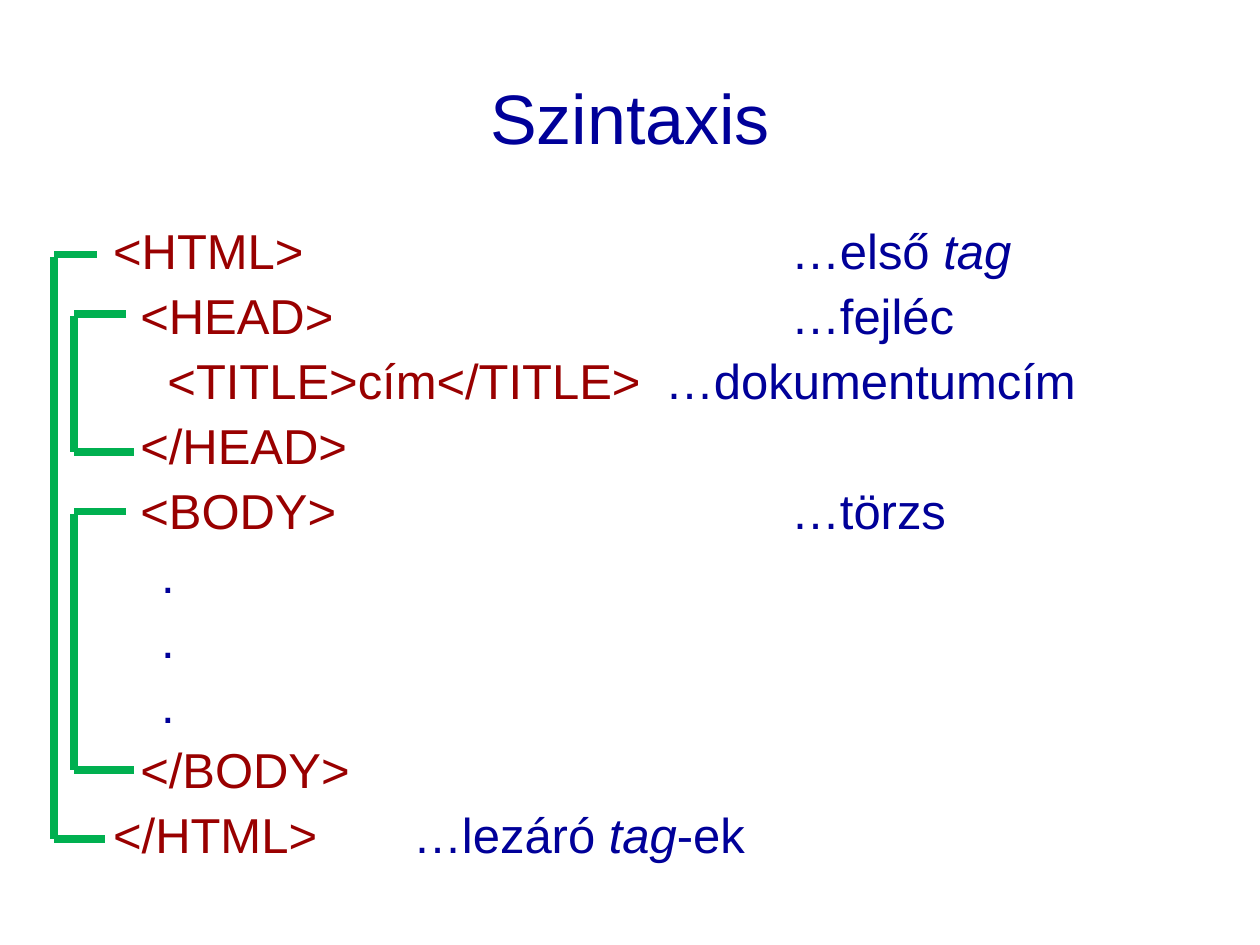
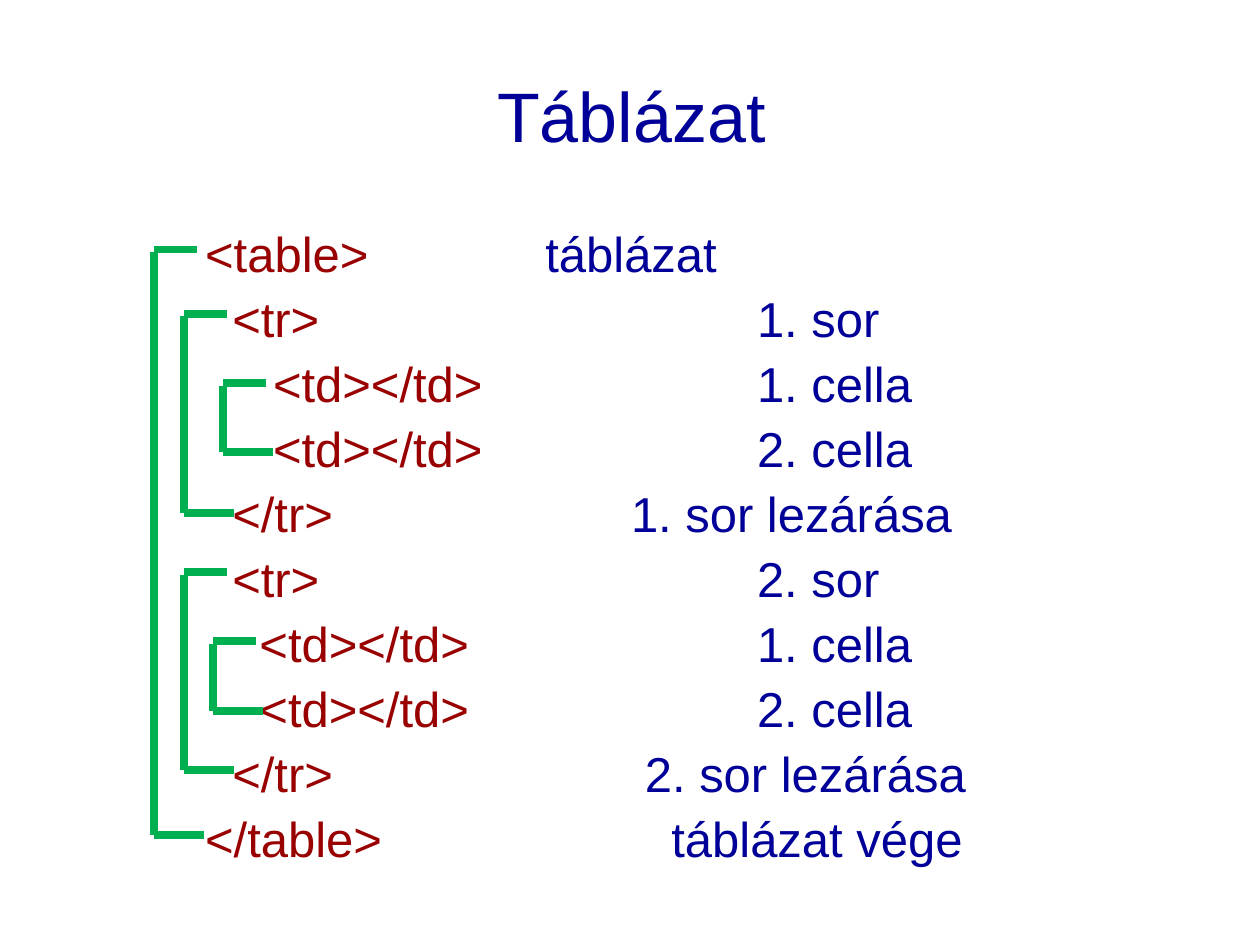
from dataclasses import dataclass
from lxml import etree
from pptx import Presentation
from pptx.dml.color import RGBColor
from pptx.enum import shapes, text
from pptx.oxml import ns
from pptx.util import Inches, Pt


@dataclass(frozen=True)
class Theme:
    font: str = "Arial"
    note: RGBColor = RGBColor.from_string("000099")
    code: RGBColor = RGBColor.from_string("990000")
    line: RGBColor = RGBColor.from_string("00B050")
    head: float = 40
    body: float = 28
    gap: float = 6.9
    lead: float = 0.9
    stroke: float = 4.5


LOOK = Theme()


def add_run(para, words, size, color, slant=False):
    run = para.add_run()
    run.text = words
    run.font.name = LOOK.font
    run.font.size = Pt(size)
    run.font.color.rgb = color
    run.font.italic = slant


def add_box(slide, box):
    frame = slide.shapes.add_textbox(*map(Inches, box)).text_frame
    frame.word_wrap = True
    return frame


def add_title(slide, box, words):
    frame = add_box(slide, box)
    frame.vertical_anchor = text.MSO_ANCHOR.MIDDLE
    para = frame.paragraphs[0]
    para.alignment = text.PP_ALIGN.CENTER
    add_run(para, words, LOOK.head, LOOK.note)


def set_tab(para, stop):
    tabs = etree.SubElement(para._p.get_or_add_pPr(), ns.qn("a:tabLst"))
    etree.SubElement(tabs, ns.qn("a:tab"), pos=str(Inches(stop)), algn="l")


def add_code(slide, box, rows):
    frame = add_box(slide, box)
    for i, (code, stop, *notes) in enumerate(rows):
        para = frame.add_paragraph() if i else frame.paragraphs[0]
        para.line_spacing = LOOK.lead
        para.space_before = Pt(LOOK.gap if i else 0)
        if code:
            add_run(para, code, LOOK.body, LOOK.code)
        if notes:
            set_tab(para, stop)
            add_run(para, "\t", LOOK.body, LOOK.note)
        for j, words in enumerate(notes):
            add_run(para, words, LOOK.body, LOOK.note, j % 2 == 1)


def add_line(slide, *ends):
    line = slide.shapes.add_connector(
        shapes.MSO_CONNECTOR.STRAIGHT, *map(Inches, ends))
    line.line.color.rgb = LOOK.line
    line.line.width = Pt(LOOK.stroke)
    etree.SubElement(line._element.spPr, ns.qn("a:effectLst"))


def add_hook(slide, box, left, top, foot, arm):
    x, y, base = box[0] + left, box[1] + top, box[1] + foot
    add_line(slide, x + arm, y, x, y)
    add_line(slide, x, y + 0.02, x, base)
    add_line(slide, x, base, x + arm + 0.06, base)


def add_page(deck, title, spot, box, rows, hooks):
    slide = deck.slides.add_slide(deck.slide_layouts[6])
    add_title(slide, spot, title)
    add_code(slide, box, rows)
    for hook in hooks:
        add_hook(slide, box, *hook)


SYNTAX = [
    ("<HTML>", 5.38, "…első ", "tag"),
    ("  <HEAD>", 5.38, "…fejléc"),
    ("    <TITLE>cím</TITLE>", 4.38, "…dokumentumcím"),
    ("  </HEAD>", 0),
    ("  <BODY>", 5.38, "…törzs"),
    *[("", 0.38, ".")] * 3,
    ("  </BODY>", 0),
    ("</HTML>", 2.38, "…lezáró ", "tag", "-ek"),
]
SYNTAX_HOOKS = [
    (-0.37, 0.27, 4.91, 0.34),
    (-0.21, 0.74, 1.84, 0.41),
    (-0.21, 2.31, 4.36, 0.41),
]

TABLE = [
    ("<table>", 2.7, "táblázat"),
    ("  <tr>", 4.38, "1. sor"),
    ("     <td></td>", 4.38, "1. cella"),
    ("     <td></td>", 4.38, "2. cella"),
    ("  </tr>", 3.38, "1. sor lezárása"),
    ("  <tr>", 4.38, "2. sor"),
    ("    <td></td>", 4.38, "1. cella"),
    ("    <td></td>", 4.38, "2. cella"),
    ("  </tr>", 3.49, "2. sor lezárása"),
    ("</table>", 3.7, "táblázat vége"),
]
TABLE_HOOKS = [
    (-0.31, 0.2, 4.85, 0.34),
    (0.24, 1.26, 1.81, 0.34),
    (-0.07, 0.71, 2.29, 0.34),
    (-0.07, 2.76, 4.33, 0.34),
    (0.16, 3.31, 3.86, 0.34),
]


def main():
    deck = Presentation()
    deck.slide_width, deck.slide_height = Inches(10), Inches(7.5)
    add_page(deck, "Szintaxis", (0.5, 0.3, 9, 1.25),
             (0.8, 1.75, 9, 4.95), SYNTAX, SYNTAX_HOOKS)
    add_page(deck, "Táblázat", (0.51, 0.28, 9, 1.25),
             (1.53, 1.78, 7.41, 5.23), TABLE, TABLE_HOOKS)
    deck.save("out.pptx")


if __name__ == "__main__":
    main()
